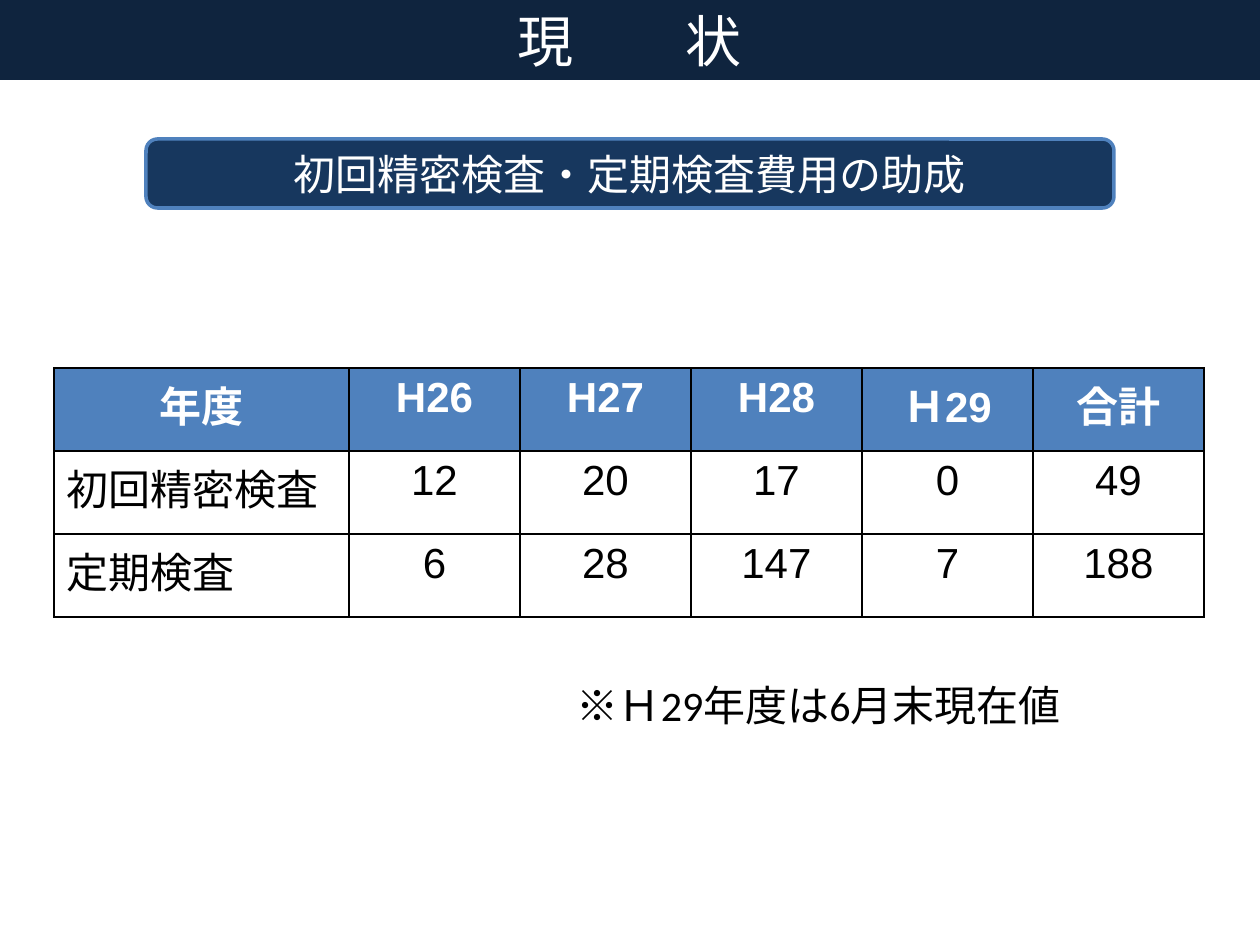
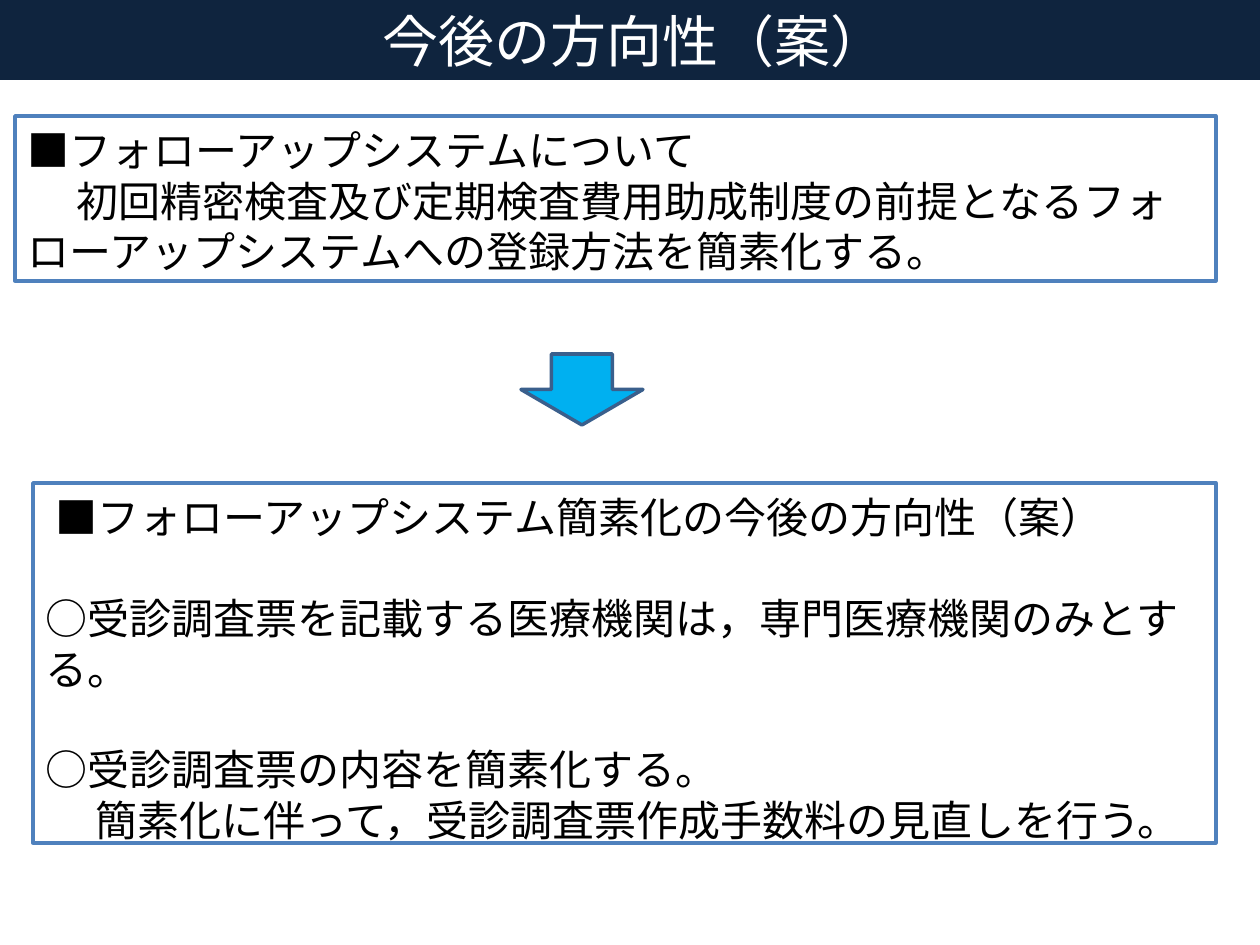
import pptx
import pptx.util
import pptx.dml.color
import pptx.enum.shapes
import pptx.enum.text
import pptx.oxml
import pptx.oxml.ns

RGBColor = pptx.dml.color.RGBColor
Pt = pptx.util.Pt
SHAPES = pptx.enum.shapes.MSO_SHAPE
ALIGN = pptx.enum.text.PP_ALIGN
ANCHOR = pptx.enum.text.MSO_ANCHOR

NAVY = RGBColor(0x0F, 0x24, 0x3E)
DEEP_BLUE = RGBColor(0x17, 0x37, 0x5E)
BLUE = RGBColor(0x4F, 0x81, 0xBD)
SKY = RGBColor(0x00, 0xB0, 0xF0)
STEEL = RGBColor(0x3A, 0x5F, 0x8C)
WHITE = RGBColor(0xFF, 0xFF, 0xFF)
BLACK = RGBColor(0x00, 0x00, 0x00)

LATIN, TABLE_FONT, JAPANESE = "Calibri", "Arial", "Noto Sans CJK JP"
EMU_PER_PX = 914400 // 126
LINE_HEIGHT = 28.8

STATUS_TITLE = "現　　状"
STATUS_HEADING = "初回精密検査・定期検査費用の助成"
STATUS_ROWS = [
    ["年度", "H26", "H27", "H28", "Ｈ29", "合計"],
    ["初回精密検査", "12", "20", "17", "0", "49"],
    ["定期検査", "6", "28", "147", "7", "188"],
]
STATUS_NOTE = "※Ｈ29年度は6月末現在値"

PLAN_TITLE = "今後の方向性（案）"
# Each paragraph: text, font, first-line indent in px, lines of space before it
CURRENT_SYSTEM = [
    ("■フォローアップシステムについて", JAPANESE, 0, 0),
    ("初回精密検査及び定期検査費用助成制度の前提となるフォローアップシステムへの登録方法を簡素化する。",
     LATIN, 49, 0),
]
SIMPLIFICATION = [
    ("■フォローアップシステム簡素化の今後の方向性（案）", JAPANESE, 10, 0),
    ("○受診調査票を記載する医療機関は，専門医療機関のみとする。", LATIN, 0, 1),
    ("○受診調査票の内容を簡素化する。", LATIN, 0, 1),
    ("簡素化に伴って，受診調査票作成手数料の見直しを行う。", LATIN, 50, 0),
]


def px(length):
    return pptx.util.Emu(length * EMU_PER_PX)


def write(para, text, font, color, size=24, align=ALIGN.LEFT, bold=False):
    span = para.add_run()
    span.text = text
    para.alignment = align
    para.font.name = font
    para.font.size = Pt(size)
    para.font.bold = bold
    para.font.color.rgb = color
    span.font.name = font
    properties = span.font._element
    properties.set("lang", "ja-JP")
    east_asian = pptx.oxml.parse_xml(
        f'<a:ea {pptx.oxml.ns.nsdecls("a")} typeface="{JAPANESE}"/>')
    properties.find(pptx.oxml.ns.qn("a:latin")).addnext(east_asian)


def add_page(deck, title, left, width):
    """Add a title-only page whose title is the navy band at the top."""
    page = deck.slides.add_slide(deck.slide_layouts[5])
    band = page.shapes.title
    band.left, band.top, band.width, band.height = map(px, (left, 0, width, 80))
    band.fill.solid()
    band.fill.fore_color.rgb = NAVY
    frame = band.text_frame
    frame.auto_size = pptx.enum.text.MSO_AUTO_SIZE.NONE
    frame.vertical_anchor = ANCHOR.MIDDLE
    frame.margin_top = frame.margin_bottom = 0
    write(frame.paragraphs[0], title, LATIN, WHITE, 32, ALIGN.CENTER)
    return page


def add_box(page, kind, place, fill, line):
    box = page.shapes.add_shape(kind, *map(px, place))
    box.shadow.inherit = False
    box.fill.solid()
    box.fill.fore_color.rgb = fill
    box.line.color.rgb = line
    box.line.width = Pt(2)
    return box


def add_text_panel(page, place, content):
    frame = add_box(page, SHAPES.RECTANGLE, place, WHITE, BLUE).text_frame
    frame.word_wrap = True
    frame.vertical_anchor = ANCHOR.TOP
    frame.margin_top, frame.margin_bottom = px(9), 0
    for index, (text, font, indent, lines_before) in enumerate(content):
        para = frame.add_paragraph() if index else frame.paragraphs[0]
        write(para, text, font, BLACK)
        para.line_spacing = Pt(LINE_HEIGHT)
        para.space_before = Pt(LINE_HEIGHT * lines_before)
        para._p.get_or_add_pPr().set("indent", str(px(indent)))


def add_borders(cell):
    properties = cell._tc.get_or_add_tcPr()
    for position, side in enumerate(("lnL", "lnR", "lnT", "lnB")):
        properties.insert(position, pptx.oxml.parse_xml(
            f'<a:{side} {pptx.oxml.ns.nsdecls("a")} w="12700"><a:solidFill>'
            f'<a:srgbClr val="{BLACK}"/></a:solidFill></a:{side}>'))


def add_status_table(page):
    label_width, year_width, row_height = 295, 171, 83
    columns = len(STATUS_ROWS[0])
    width = label_width + year_width * (columns - 1)
    table = page.shapes.add_table(
        len(STATUS_ROWS), columns, px(54), px(368),
        px(width), px(row_height * len(STATUS_ROWS))).table
    for index, column in enumerate(table.columns):
        column.width = px(year_width if index else label_width)
    for row_index, row in enumerate(STATUS_ROWS):
        header = row_index == 0
        for column_index, text in enumerate(row):
            cell = table.cell(row_index, column_index)
            cell.fill.solid()
            cell.fill.fore_color.rgb = BLUE if header else WHITE
            centred = header or column_index > 0
            write(cell.text_frame.paragraphs[0], text, TABLE_FONT,
                  WHITE if header else BLACK, bold=header,
                  align=ALIGN.CENTER if centred else ALIGN.LEFT)
            add_borders(cell)


def build_status_page(deck):
    page = add_page(deck, STATUS_TITLE, 0, 1260)
    heading = add_box(page, SHAPES.ROUNDED_RECTANGLE, (146, 139, 968, 69),
                      DEEP_BLUE, BLUE)
    heading.text_frame.vertical_anchor = ANCHOR.MIDDLE
    write(heading.text_frame.paragraphs[0], STATUS_HEADING, TABLE_FONT, WHITE,
          align=ALIGN.CENTER)
    add_status_table(page)
    note = page.shapes.add_textbox(*map(px, (392, 673, 681, 63))).text_frame
    note.word_wrap = True
    note.vertical_anchor = ANCHOR.MIDDLE
    write(note.paragraphs[0], STATUS_NOTE, LATIN, BLACK, align=ALIGN.RIGHT)


def build_plan_page(deck):
    page = add_page(deck, PLAN_TITLE, -5, 1280)
    add_text_panel(page, (15, 116, 1201, 165), CURRENT_SYSTEM)
    add_text_panel(page, (33, 483, 1183, 360), SIMPLIFICATION)
    add_box(page, SHAPES.DOWN_ARROW, (521, 354, 122, 71), SKY, STEEL)


def main():
    deck = pptx.Presentation()
    deck.slide_width, deck.slide_height = px(1260), px(945)
    build_status_page(deck)
    build_plan_page(deck)
    deck.save("out.pptx")


if __name__ == "__main__":
    main()
